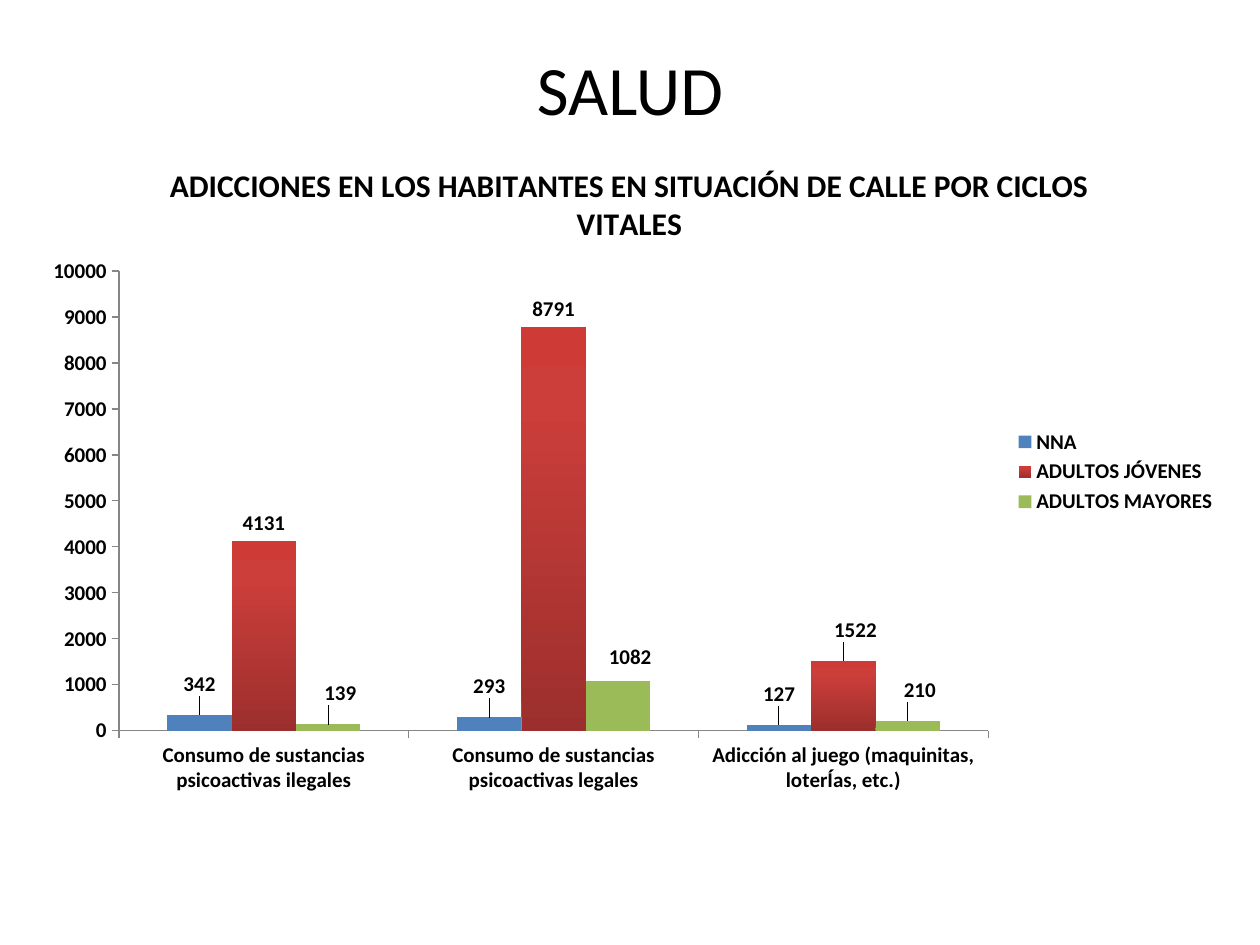
from copy import deepcopy

from lxml import etree
from pptx import Presentation
from pptx.chart.data import CategoryChartData
from pptx.dml.color import RGBColor
from pptx.enum.chart import XL_CHART_TYPE, XL_LABEL_POSITION, XL_LEGEND_POSITION, XL_TICK_MARK
from pptx.enum.text import MSO_ANCHOR, PP_ALIGN
from pptx.oxml.ns import qn
from pptx.util import Inches, Pt


def style_font(font, size, color="000000", bold=True):
    font.name = "Calibri"
    font.size = Pt(size)
    font.bold = bold
    font.color.rgb = RGBColor.from_string(color)


def add_layout(parent, index, **values):
    """Insert a manual chart layout; values are fractions of the chart size."""
    layout = etree.Element(qn("c:layout"))
    manual = etree.SubElement(layout, qn("c:manualLayout"))
    for name, value in values.items():
        etree.SubElement(manual, qn(f"c:{name}")).set("val", str(value))
    parent.insert(index, layout)


presentation = Presentation()
presentation.slide_width = Inches(10)
presentation.slide_height = Inches(7.5)
slide = presentation.slides.add_slide(presentation.slide_layouts[6])

# Chart
chart_data = CategoryChartData()
chart_data.categories = [
    "Consumo de sustancias psicoactivas ilegales",
    "Consumo de sustancias psicoactivas legales",
    "Adicción al juego (maquinitas, loterÍas, etc.)",
]
chart_data.add_series("NNA", (342, 293, 127))
chart_data.add_series("ADULTOS JÓVENES", (4131, 8791, 1522))
chart_data.add_series("ADULTOS MAYORES", (139, 1082, 210))
chart = slide.shapes.add_chart(
    XL_CHART_TYPE.COLUMN_CLUSTERED,
    Inches(0.23), Inches(1.09), Inches(9.53), Inches(5.31), chart_data,
).chart
style_font(chart.font, 12)

chart.has_title = True
title_frame = chart.chart_title.text_frame
title_frame.text = "ADICCIONES EN LOS HABITANTES EN SITUACIÓN DE CALLE POR CICLOS VITALES"
style_font(title_frame.paragraphs[0].runs[0].font, 18)
chart.chart_title.include_in_layout = False

chart.has_legend = True
chart.legend.position = XL_LEGEND_POSITION.RIGHT
chart.legend.include_in_layout = False
style_font(chart.legend.font, 12)

chart.value_axis.has_major_gridlines = False
chart.value_axis.minimum_scale = 0
chart.value_axis.maximum_scale = 10000
chart.value_axis.major_unit = 1000
for axis in (chart.category_axis, chart.value_axis):
    axis.major_tick_mark = XL_TICK_MARK.OUTSIDE
    axis.minor_tick_mark = XL_TICK_MARK.NONE
    axis.format.line.color.rgb = RGBColor.from_string("868686")
    style_font(axis.tick_labels.font, 12)

plot = chart.plots[0]
plot.gap_width = 150
plot.overlap = 0
plot.vary_by_categories = False
plot_area = chart._chartSpace.find(".//" + qn("c:plotArea"))
for old_layout in plot_area.findall(qn("c:layout")):
    plot_area.remove(old_layout)
add_layout(plot_area, 0, layoutTarget="inner", xMode="edge", yMode="edge",
           x=0.075, y=0.2, w=0.724, h=0.687)

# Fills, and labels moved away from the bars: point -> (x, y) offset
solid_colors = {"NNA": "4F81BD", "ADULTOS MAYORES": "9BBB59"}
gradient = [(0, "9C2F2D"), (0.8, "CB3E3A"), (1, "CE3B37")]
label_offsets = {
    "NNA": {0: (0, -0.02), 1: (0, -0.02), 2: (0, -0.02)},
    "ADULTOS JÓVENES": {2: (0.01, -0.02)},
    "ADULTOS MAYORES": {0: (0.01, -0.02), 1: (0.01, -0.01), 2: (0.01, -0.02)},
}
for series in plot.series:
    fill = series.format.fill
    series.invert_if_negative = False
    if series.name in solid_colors:
        fill.solid()
        fill.fore_color.rgb = RGBColor.from_string(solid_colors[series.name])
    else:
        fill.gradient()
        fill.gradient_angle = 90
        stop_list = series._element.find(".//" + qn("a:gsLst"))
        stop_list.append(deepcopy(stop_list[-1]))
        for stop, (position, color) in zip(fill.gradient_stops, gradient):
            stop.position = position
            stop.color.rgb = RGBColor.from_string(color)

    labels = series.data_labels
    labels.show_value = True
    labels.position = XL_LABEL_POSITION.OUTSIDE_END
    style_font(labels.font, 12)
    for point, (x, y) in label_offsets[series.name].items():
        label = series.points[point].data_label
        style_font(label.font, 12)
        label.position = XL_LABEL_POSITION.OUTSIDE_END
        add_layout(label._dLbl, 1, x=x, y=y)

# Slide title
title = slide.shapes.add_textbox(Inches(0.5), Inches(0.3), Inches(9), Inches(0.79))
title.text_frame.word_wrap = True
title.text_frame.vertical_anchor = MSO_ANCHOR.MIDDLE
title.text_frame.text = "SALUD"
paragraph = title.text_frame.paragraphs[0]
paragraph.alignment = PP_ALIGN.CENTER
style_font(paragraph.runs[0].font, 39.6, bold=False)

presentation.save("out.pptx")
